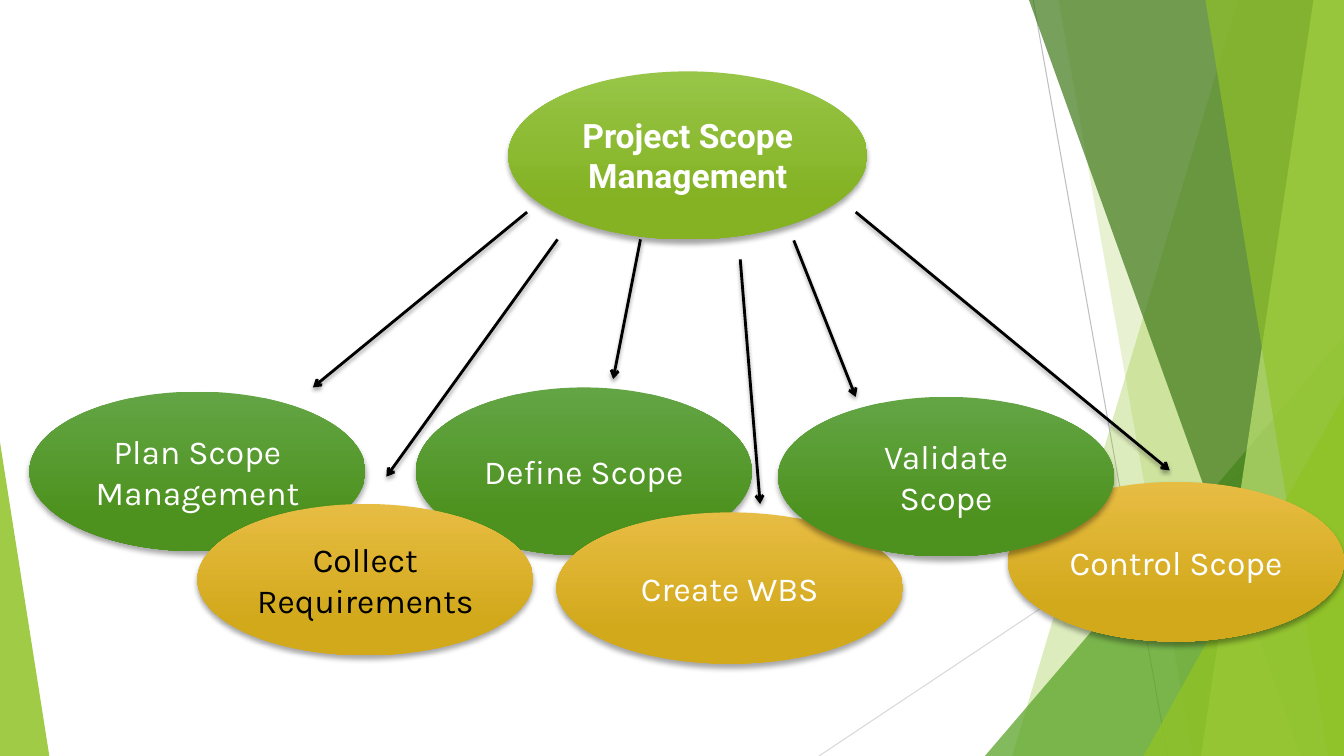
from dataclasses import dataclass

from lxml.etree import SubElement
from pptx import Presentation
from pptx.dml.color import RGBColor
from pptx.enum.shapes import MSO_CONNECTOR, MSO_SHAPE
from pptx.enum.text import MSO_ANCHOR, PP_ALIGN
from pptx.oxml.ns import qn
from pptx.util import Emu, Pt

PX = 9525  # EMU in one px, 96 px to the inch
WIDE, HIGH = 1280, 720


@dataclass(frozen=True)
class Theme:
    lime: str = "90C226"
    leaf: str = "54A021"
    moss: str = "3F7819"
    pale: str = "C0E474"
    white: str = "FFFFFF"
    black: str = "000000"
    grey: str = "BFBFBF"
    mist: str = "D9D9D9"
    root: tuple = ("97C547", "84B223")
    green: tuple = ("63A545", "4D921E")
    gold: tuple = ("E7BC43", "D2A91B")
    head: str = "Roboto"
    body: str = "Karla"
    size: int = 24
    thin: float = 0.75
    thick: float = 2


def write(shape, text, *, font, size, color, bold=False):
    frame = shape.text_frame
    frame.word_wrap = True
    frame.vertical_anchor = MSO_ANCHOR.MIDDLE
    frame.text = text
    for para in frame.paragraphs:
        para.alignment = PP_ALIGN.CENTER
        for run in para.runs:
            run.font.name = font
            run.font.size = Pt(size)
            run.font.bold = bold
            run.font.color.rgb = RGBColor.from_string(color)


def shade(effects, blur, dist):
    """Add a soft shadow that falls straight down, with lengths in points."""
    cast = SubElement(effects, qn("a:outerShdw"), blurRad=str(Pt(blur)),
                      dist=str(Pt(dist)), dir="5400000", rotWithShape="0")
    tone = SubElement(cast, qn("a:srgbClr"), val="000000")
    SubElement(tone, qn("a:alpha"), val="35000")


class Board:
    def __init__(self, slide, theme):
        self.shapes = slide.shapes
        self.theme = theme

    def tint(self, shape, color, alpha):
        """Give a flat fill with alpha in percent, no line and no shadow."""
        shape.fill.solid()
        shape.fill.fore_color.rgb = RGBColor.from_string(color)
        tone = shape.element.spPr.find(qn("a:solidFill"))[0]
        SubElement(tone, qn("a:alpha"), val=str(alpha * 1000))
        shape.line.fill.background()
        shape.shadow.inherit = False

    def panel(self, top, base, color, alpha):
        """Fill from a slanted left edge to the right side of the slide."""
        pen = self.shapes.build_freeform(top, 0, scale=PX)
        pen.add_line_segments([(WIDE, 0), (WIDE, HIGH), (base, HIGH)])
        self.tint(pen.convert_to_shape(), color, alpha)

    def wedge(self, left, top, width, peak, color, alpha):
        """Draw a triangle that stands on the bottom of the slide."""
        box = (Emu(v * PX) for v in (left, top, width, HIGH - top))
        shape = self.shapes.add_shape(MSO_SHAPE.ISOSCELES_TRIANGLE, *box)
        shape.adjustments[0] = peak
        self.tint(shape, color, alpha)

    def line(self, start, end, color, width):
        ends = (Emu(v * PX) for v in (*start, *end))
        link = self.shapes.add_connector(MSO_CONNECTOR.STRAIGHT, *ends)
        link.line.color.rgb = RGBColor.from_string(color)
        link.line.width = Pt(width)
        return link, SubElement(link.element.spPr, qn("a:effectLst"))

    def arrow(self, start, end):
        link, effects = self.line(start, end, self.theme.black, self.theme.thick)
        SubElement(link.element.spPr.find(qn("a:ln")), qn("a:tailEnd"), type="arrow")
        shade(effects, 3, 2)

    def oval(self, text, left, top, width, height, blend, **look):
        box = (Emu(v * PX) for v in (left, top, width, height))
        shape = self.shapes.add_shape(MSO_SHAPE.OVAL, *box)
        shape.fill.gradient()
        shape.fill.gradient_angle = 270
        for stop, color, place in zip(shape.fill.gradient_stops, blend, (0, 0.78)):
            stop.color.rgb = RGBColor.from_string(color)
            stop.position = place
        shape.line.fill.background()
        shape.shadow.inherit = False
        shade(shape.element.spPr.find(qn("a:effectLst")), 4, 3)
        base = dict(font=self.theme.body, size=self.theme.size, color=self.theme.white)
        write(shape, text, **(base | look))


def main():
    deck = Presentation()
    deck.slide_width, deck.slide_height = Emu(WIDE * PX), Emu(HIGH * PX)
    theme = Theme()
    board = Board(deck.slides.add_slide(deck.slide_layouts[6]), theme)

    board.line((984, 0), (1112, HIGH), theme.grey, theme.thin)
    board.line((WIDE, 387), (780, HIGH), theme.mist, theme.thin)
    board.panel(1179, 964, theme.lime, 30)
    board.panel(1008, 1136, theme.lime, 20)
    board.wedge(938, 320, 342, 1, theme.leaf, 72)
    board.panel(980, 1239, theme.moss, 70)
    board.panel(1251, 1144, theme.pale, 70)
    board.panel(1148, 1265, theme.lime, 65)
    board.wedge(1089, 377, 191, 1, theme.lime, 80)
    board.wedge(0, 421, 47, 0, theme.lime, 85)

    board.oval("Project Scope Management", 484, 68, 342, 160, theme.root,
               font=theme.head, bold=True)
    board.oval("Define Scope", 396, 369, 320, 160, theme.green)
    board.oval("Control Scope", 960, 459, 320, 152, theme.gold)
    board.oval("Create WBS", 530, 488, 330, 144, theme.gold)
    board.oval("Plan Scope\nManagement", 28, 373, 320, 152, theme.green)
    for start, end in (
        ((502, 202), (298, 369)),
        ((531, 228), (368, 454)),
        ((610, 228), (584, 361)),
        ((705, 247), (724, 480)),
        ((815, 202), (1114, 448)),
        ((756, 229), (815, 378)),
    ):
        board.arrow(start, end)
    board.oval("Validate Scope", 741, 378, 320, 152, theme.green)
    board.oval("Collect\nRequirements", 188, 480, 320, 144, theme.gold,
               color=theme.black)

    deck.save("out.pptx")


if __name__ == "__main__":
    main()
